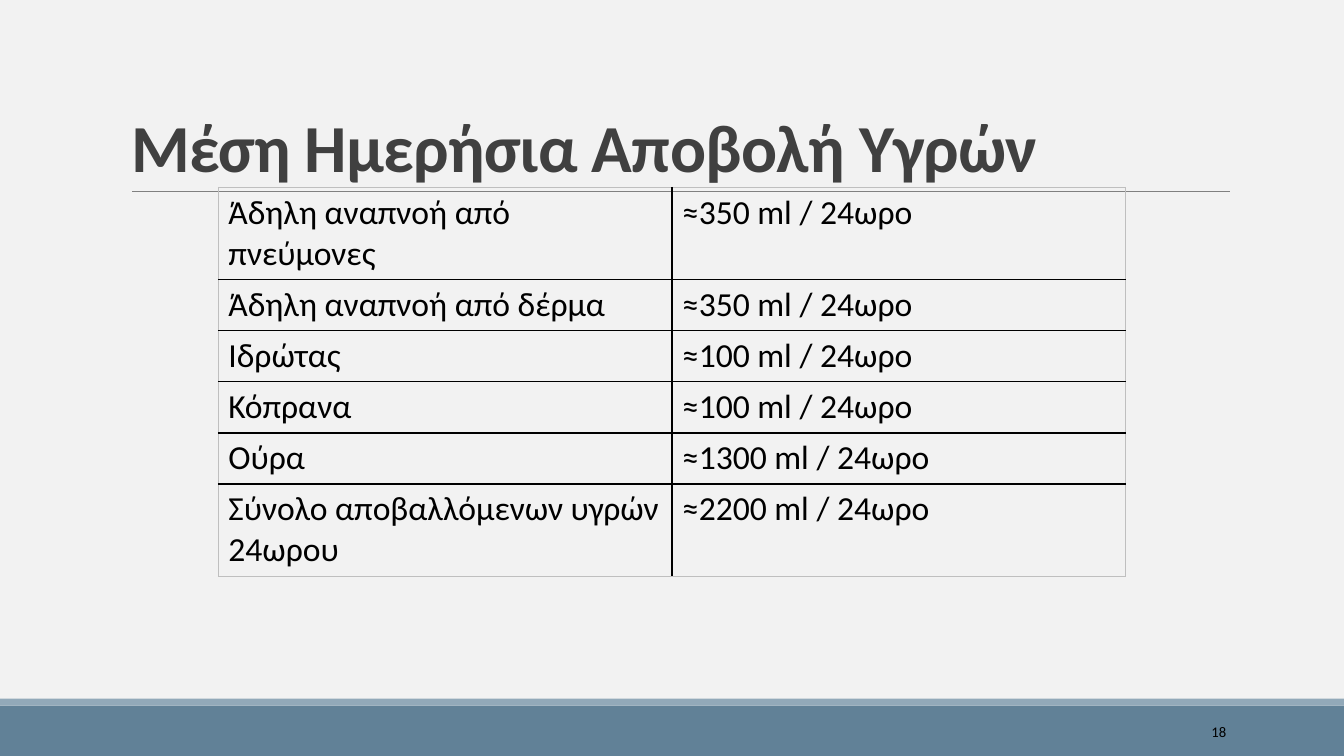
from lxml.etree import SubElement
from pptx import Presentation
from pptx.dml.color import RGBColor
from pptx.enum.shapes import MSO_CONNECTOR, MSO_SHAPE
from pptx.enum.text import MSO_ANCHOR, MSO_AUTO_SIZE, PP_ALIGN
from pptx.oxml.ns import qn
from pptx.util import Pt

BACKGROUND = RGBColor(0xF2, 0xF2, 0xF2)
BAND = RGBColor(0x61, 0x81, 0x97)
STRIPE = RGBColor(0x92, 0xA9, 0xB9)
RULE = RGBColor(0x80, 0x80, 0x80)
TITLE = RGBColor(0x40, 0x40, 0x40)
FRAME = RGBColor(0xBF, 0xBF, 0xBF)
BLACK = RGBColor(0, 0, 0)
FONT = "Calibri"
WIDTH, HEIGHT = 960, 540
LINE_HEIGHT, CELL_PADDING = 29.3, 7.2

FLUID_LOSSES = [
    ("Άδηλη αναπνοή από πνεύμονες", "≈350 ml / 24ωρο", 2),
    ("Άδηλη αναπνοή από δέρμα", "≈350 ml / 24ωρο", 1),
    ("Ιδρώτας", "≈100 ml / 24ωρο", 1),
    ("Κόπρανα", "≈100 ml / 24ωρο", 1),
    ("Ούρα", "≈1300 ml / 24ωρο", 1),
    ("Σύνολο αποβαλλόμενων υγρών 24ωρου", "≈2200 ml / 24ωρο", 2),
]


def add_run(p, text, size, color, bold=False):
    """Append a formatted run to a paragraph and return it."""
    r = p.add_run()
    r.text = text
    r.font.name, r.font.size, r.font.bold = FONT, Pt(size), bold
    r.font.color.rgb = color
    return r


def add_bar(s, x, y, w, h, color):
    """Draw a plain filled bar."""
    sp = s.shapes.add_shape(MSO_SHAPE.RECTANGLE, Pt(x), Pt(y), Pt(w), Pt(h))
    sp.shadow.inherit = False
    sp.fill.solid()
    sp.fill.fore_color.rgb = color
    sp.line.fill.background()


def add_footer(s, x, y, w, h, number):
    """Draw the footer stripe and band with the slide number at the right."""
    stripe = 5
    add_bar(s, x, y + stripe, w, h - stripe, BAND)
    add_bar(s, x, y, w, stripe, STRIPE)
    sp = s.shapes.add_textbox(Pt(x + w - 180), Pt(y + 9.5), Pt(103), Pt(28.8))
    tf = sp.text_frame
    tf.word_wrap = True
    tf.vertical_anchor = MSO_ANCHOR.MIDDLE
    p = tf.paragraphs[0]
    p.alignment = PP_ALIGN.RIGHT
    add_run(p, number, 10.5, BLACK)


def add_title(s, x, y, w, h, text):
    """Place the title at the bottom of its box, with a rule beneath it."""
    sp = s.shapes.title
    sp.left, sp.top, sp.width, sp.height = Pt(x), Pt(y), Pt(w), Pt(h)
    tf = sp.text_frame
    tf.word_wrap = True
    tf.auto_size = MSO_AUTO_SIZE.NONE
    tf.vertical_anchor = MSO_ANCHOR.BOTTOM
    p = tf.paragraphs[0]
    p.alignment = PP_ALIGN.LEFT
    p.line_spacing = 0.85
    r = add_run(p, text, 48, TITLE, True)
    r.font._element.set("spc", "-50")
    rule = s.shapes.add_connector(
        MSO_CONNECTOR.STRAIGHT, Pt(x + 8), Pt(y + h), Pt(x + w), Pt(y + h))
    rule.line.color.rgb = RULE
    rule.line.width = Pt(0.5)
    SubElement(rule._element.spPr, qn("a:effectLst"))


def set_borders(cell, colors):
    """Give a cell its left, right, top and bottom borders."""
    tcPr = cell._tc.get_or_add_tcPr()
    for i, (side, color) in enumerate(zip("LRTB", colors)):
        ln = tcPr.makeelement(qn(f"a:ln{side}"), {"w": str(Pt(1))})
        fill = SubElement(ln, qn("a:solidFill"))
        SubElement(fill, qn("a:srgbClr"), val=str(color))
        tcPr.insert(i, ln)


def add_losses_table(s, x, y, w, losses):
    """Build the two-column table, sizing each row by its lines of text."""
    heights = [lines * LINE_HEIGHT + CELL_PADDING for *_, lines in losses]
    frame = s.shapes.add_table(
        len(losses), 2, Pt(x), Pt(y), Pt(w), Pt(sum(heights)))
    table = frame.table
    table.first_row = table.horz_banding = False
    for column in table.columns:
        column.width = Pt(w / 2)
    last = len(losses) - 1
    for i, (source, amount, _) in enumerate(losses):
        table.rows[i].height = Pt(heights[i])
        for j, text in enumerate((source, amount)):
            cell = table.cell(i, j)
            cell.fill.background()
            add_run(cell.text_frame.paragraphs[0], text, 24, BLACK)
            outer = (j == 0, j == 1, i == 0, i == last)
            set_borders(cell, [FRAME if edge else BLACK for edge in outer])


def main():
    """Build and save the slide."""
    prs = Presentation()
    prs.slide_width, prs.slide_height = Pt(WIDTH), Pt(HEIGHT)
    s = prs.slides.add_slide(prs.slide_layouts[5])
    s.background.fill.solid()
    s.background.fill.fore_color.rgb = BACKGROUND
    add_footer(s, 0, 499, WIDTH, 41, "18")
    add_title(s, 86.4, 22.5, 792, 114.2, "Μέση Ημερήσια Αποβολή Υγρών")
    add_losses_table(s, 156, 134, 648, FLUID_LOSSES)
    prs.save("out.pptx")


if __name__ == "__main__":
    main()
